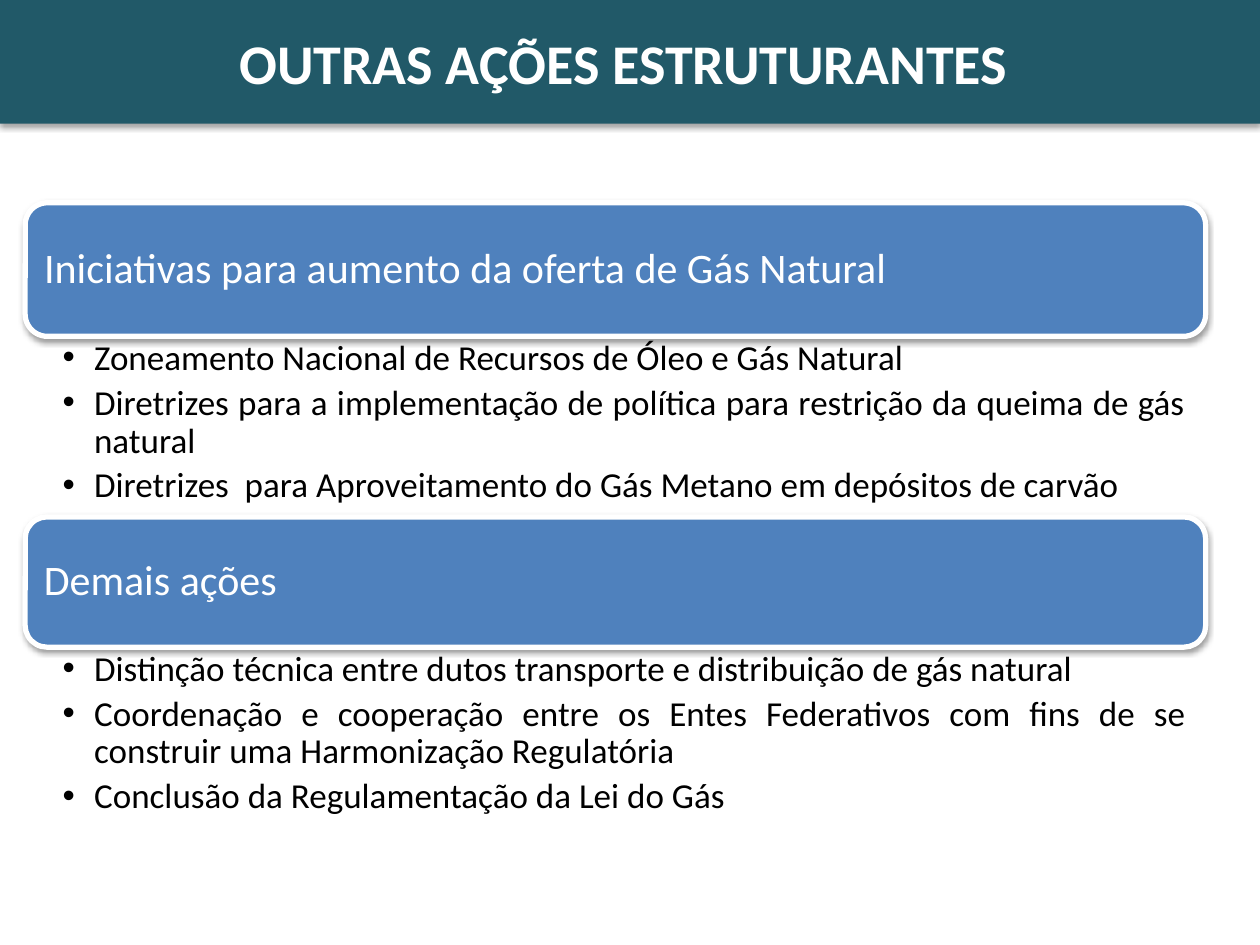
from lxml import etree
from pptx import Presentation
from pptx.dml.color import RGBColor
from pptx.enum.shapes import MSO_SHAPE as Shape
from pptx.enum.text import MSO_ANCHOR as Anchor, PP_ALIGN as Align
from pptx.oxml.ns import qn
from pptx.util import Pt

FONT = "Calibri"
COLORS = {
    "banner": "215968",
    "heading": "4F81BD",
    "white": "FFFFFF",
    "black": "000000",
}
LEFT, WIDTH = 14.4, 674.6
LIST_HEIGHT = 103

# Heading text, heading top, heading height, list items
SECTIONS = [
    ("Iniciativas para aumento da oferta de Gás Natural", 115.9, 76.3, [
        "Zoneamento Nacional de Recursos de Óleo e Gás Natural",
        "Diretrizes para a implementação de política para restrição da queima de gás natural",
        "Diretrizes  para Aproveitamento do Gás Metano em depósitos de carvão",
    ]),
    ("Demais ações", 295.4, 74.4, [
        "Distinção técnica entre dutos transporte e distribuição de gás natural",
        "Coordenação e cooperação entre os Entes Federativos com fins de se "
        "construir uma Harmonização Regulatória",
        "Conclusão da Regulamentação da Lei do Gás",
    ]),
]


def color(name):
    return RGBColor.from_string(COLORS[name])


def add_shadow(shape, opacity, distance):
    """Give the shape a soft black shadow that falls straight down."""
    shape.shadow.inherit = False
    effects = shape._element.spPr.find(qn("a:effectLst"))
    outer = etree.SubElement(effects, qn("a:outerShdw"), blurRad=str(Pt(3.1)),
                             dist=str(Pt(distance)), dir="5400000", rotWithShape="0")
    black = etree.SubElement(outer, qn("a:srgbClr"), val=COLORS["black"])
    etree.SubElement(black, qn("a:alpha"), val=str(opacity * 1000))


def set_margins(frame, left, top, right, bottom):
    frame.margin_left, frame.margin_top = Pt(left), Pt(top)
    frame.margin_right, frame.margin_bottom = Pt(right), Pt(bottom)


def format_text(para, size, color_name, align, bold=False):
    para.alignment = align
    for span in para.runs:
        span.font.name = FONT
        span.font.size = Pt(size)
        span.font.bold = bold
        span.font.color.rgb = color(color_name)


def add_bullet(para):
    properties = para._p.get_or_add_pPr()
    properties.set("marL", str(Pt(18)))
    properties.set("indent", str(Pt(-18)))
    etree.SubElement(properties, qn("a:buFont"), typeface="Arial")
    etree.SubElement(properties, qn("a:buChar"), char="•")


def add_banner(page, text):
    banner = page.shapes.add_shape(Shape.RECTANGLE, 0, 0, Pt(720), Pt(70.6))
    banner.fill.solid()
    banner.fill.fore_color.rgb = color("banner")
    banner.line.fill.background()
    add_shadow(banner, opacity=35, distance=1.8)
    frame = banner.text_frame
    frame.text = text
    frame.vertical_anchor = Anchor.MIDDLE
    format_text(frame.paragraphs[0], 32, "white", Align.CENTER, bold=True)


def add_heading(page, text, top, height):
    heading = page.shapes.add_shape(Shape.ROUNDED_RECTANGLE, Pt(LEFT), Pt(top),
                                    Pt(WIDTH), Pt(height))
    heading.fill.solid()
    heading.fill.fore_color.rgb = color("heading")
    heading.line.color.rgb = color("white")
    heading.line.width = Pt(3)
    add_shadow(heading, opacity=38, distance=1.6)
    frame = heading.text_frame
    frame.text = text
    frame.vertical_anchor = Anchor.MIDDLE
    set_margins(frame, 7.2, 7.2, 7.2, 7.2)
    para = frame.paragraphs[0]
    para.line_spacing = 0.9
    format_text(para, 24, "white", Align.JUSTIFY)


def add_list(page, items, top):
    box = page.shapes.add_textbox(Pt(LEFT), Pt(top), Pt(WIDTH), Pt(LIST_HEIGHT))
    frame = box.text_frame
    frame.word_wrap = True
    set_margins(frame, 21.4, 2.2, 11.5, 2.2)
    frame.text = "\n".join(items)
    for para in frame.paragraphs:
        para.level = 1
        para.line_spacing = 0.9
        para.space_after = Pt(4)
        add_bullet(para)
        format_text(para, 20, "black", Align.JUSTIFY)


def main():
    deck = Presentation()
    deck.slide_width, deck.slide_height = Pt(720), Pt(540)
    page = deck.slides.add_slide(deck.slide_layouts[6])
    add_banner(page, "OUTRAS AÇÕES ESTRUTURANTES ")
    for text, top, height, items in SECTIONS:
        add_heading(page, text, top, height)
        add_list(page, items, top + height)
    deck.save("out.pptx")


if __name__ == "__main__":
    main()
